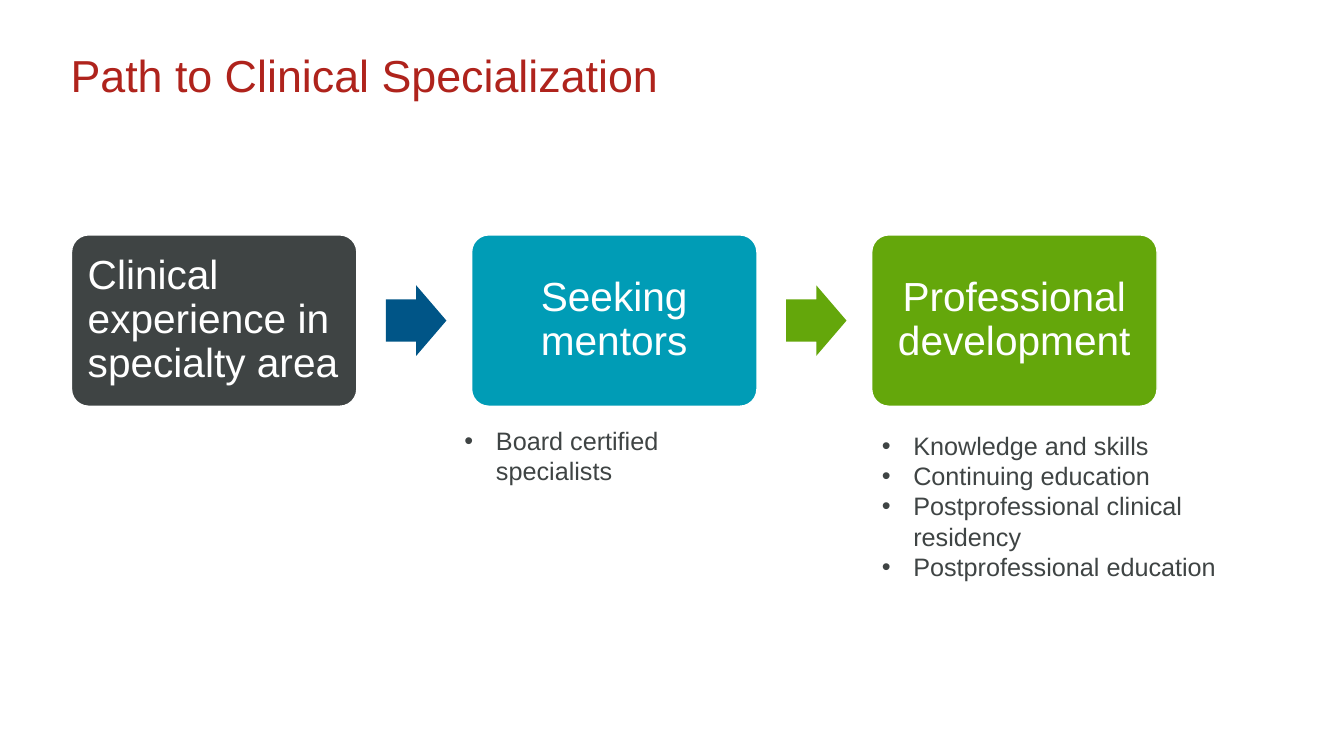
from dataclasses import dataclass
from typing import Any

from lxml import etree
from pptx import Presentation
from pptx.dml.color import RGBColor
from pptx.enum import shapes, text
from pptx.oxml import ns
from pptx.util import Pt

FONT = "Arial"
RED, SLATE, WHITE = "AF231C", "3F4444", "FFFFFF"
TEAL, NAVY, GREEN = "009CB6", "005587", "64A70B"

STEP_LEFT, STEP_TOP, STEP_W, STEP_H = 51.1, 167.8, 203.8, 122.4
STEP_PITCH = 285.8
ARROW_DX, ARROW_W, ARROW_H = 224.6, 43.2, 50.4
ARROW_TOP = STEP_TOP + (STEP_H - ARROW_H) / 2
BULLET_INDENT = 22.5


@dataclass
class Step:
    label: str
    fill: str
    align: Any = text.PP_ALIGN.CENTER


@dataclass
class Notes:
    left: float
    top: float
    width: float
    height: float
    items: list[str]


STEPS = [
    Step("Clinical experience in specialty area", SLATE, text.PP_ALIGN.LEFT),
    Step("Seeking mentors", TEAL),
    Step("Professional development", GREEN),
]
ARROW_FILLS = [NAVY, GREEN]
NOTES = [
    Notes(324.7, 300.2, 180, 51, ["Board certified specialists"]),
    Notes(622.8, 303.8, 330, 116.6, [
        "Knowledge and skills",
        "Continuing education",
        "Postprofessional clinical \vresidency",
        "Postprofessional education",
    ]),
]


def rgb(value: str) -> RGBColor:
    return RGBColor.from_string(value)


def set_all(obj: Any, values: dict[str, Any]) -> None:
    for name, value in values.items():
        setattr(obj, name, value)


def set_margins(tf: Any, size: float) -> None:
    for side in ("left", "top", "right", "bottom"):
        setattr(tf, f"margin_{side}", Pt(size))


def style(p: Any, size: float, color: str, **fmt: Any) -> None:
    """Format a paragraph and all its runs."""
    set_all(p, fmt)
    for r in p.runs:
        set_all(r.font, {"name": FONT, "size": Pt(size)})
        r.font.color.rgb = rgb(color)


def add_block(slide: Any, kind: Any, box: tuple[float, ...], fill: str, adj: list[float]) -> Any:
    """Add a filled preset shape without a shadow or outline."""
    sp = slide.shapes.add_shape(kind, *map(Pt, box))
    sp.shadow.inherit = False
    sp.fill.solid()
    sp.fill.fore_color.rgb = rgb(fill)
    sp.line.fill.background()
    for i, value in enumerate(adj):
        sp.adjustments[i] = value
    return sp


def add_step(slide: Any, step: Step, left: float) -> None:
    sp = add_block(slide, shapes.MSO_SHAPE.ROUNDED_RECTANGLE,
                   (left, STEP_TOP, STEP_W, STEP_H), step.fill, [0.1])
    sp.line.color.rgb = rgb(WHITE)
    sp.line.width = Pt(1)
    tf = sp.text_frame
    set_all(tf, {"word_wrap": True, "vertical_anchor": text.MSO_ANCHOR.MIDDLE})
    set_margins(tf, 8)
    p = tf.paragraphs[0]
    p.text = step.label
    style(p, 29, WHITE, alignment=step.align, line_spacing=0.9)


def add_title(slide: Any, title: str) -> None:
    tf = slide.shapes.add_textbox(Pt(50.4), Pt(38.2), Pt(792), Pt(72)).text_frame
    tf.word_wrap = True
    set_margins(tf, 0)
    p = tf.paragraphs[0]
    p.text = title
    style(p, 32, RED, line_spacing=0.9)


def add_bullet(p: Any) -> None:
    pPr = p._p.get_or_add_pPr()
    pPr.set("marL", str(Pt(BULLET_INDENT)))
    pPr.set("indent", str(-Pt(BULLET_INDENT)))
    etree.SubElement(pPr, ns.qn("a:buFont")).set("typeface", FONT)
    etree.SubElement(pPr, ns.qn("a:buChar")).set("char", "•")


def add_notes(slide: Any, notes: Notes) -> None:
    box = (notes.left, notes.top, notes.width, notes.height)
    tf = slide.shapes.add_textbox(*map(Pt, box)).text_frame
    set_all(tf, {"word_wrap": True, "auto_size": text.MSO_AUTO_SIZE.SHAPE_TO_FIT_TEXT})
    for i, item in enumerate(notes.items):
        p = tf.add_paragraph() if i else tf.paragraphs[0]
        add_bullet(p)
        p.text = item
        style(p, 18, SLATE)


def main() -> None:
    prs = Presentation()
    set_all(prs, {"slide_width": Pt(960), "slide_height": Pt(540)})
    slide = prs.slides.add_slide(prs.slide_layouts[6])
    add_title(slide, "Path to Clinical Specialization")
    for i, step in enumerate(STEPS):
        add_step(slide, step, STEP_LEFT + i * STEP_PITCH)
    for i, fill in enumerate(ARROW_FILLS):
        left = STEP_LEFT + i * STEP_PITCH + ARROW_DX
        add_block(slide, shapes.MSO_SHAPE.RIGHT_ARROW,
                  (left, ARROW_TOP, ARROW_W, ARROW_H), fill, [0.6, 0.5])
    for notes in NOTES:
        add_notes(slide, notes)
    prs.save("out.pptx")


if __name__ == "__main__":
    main()
